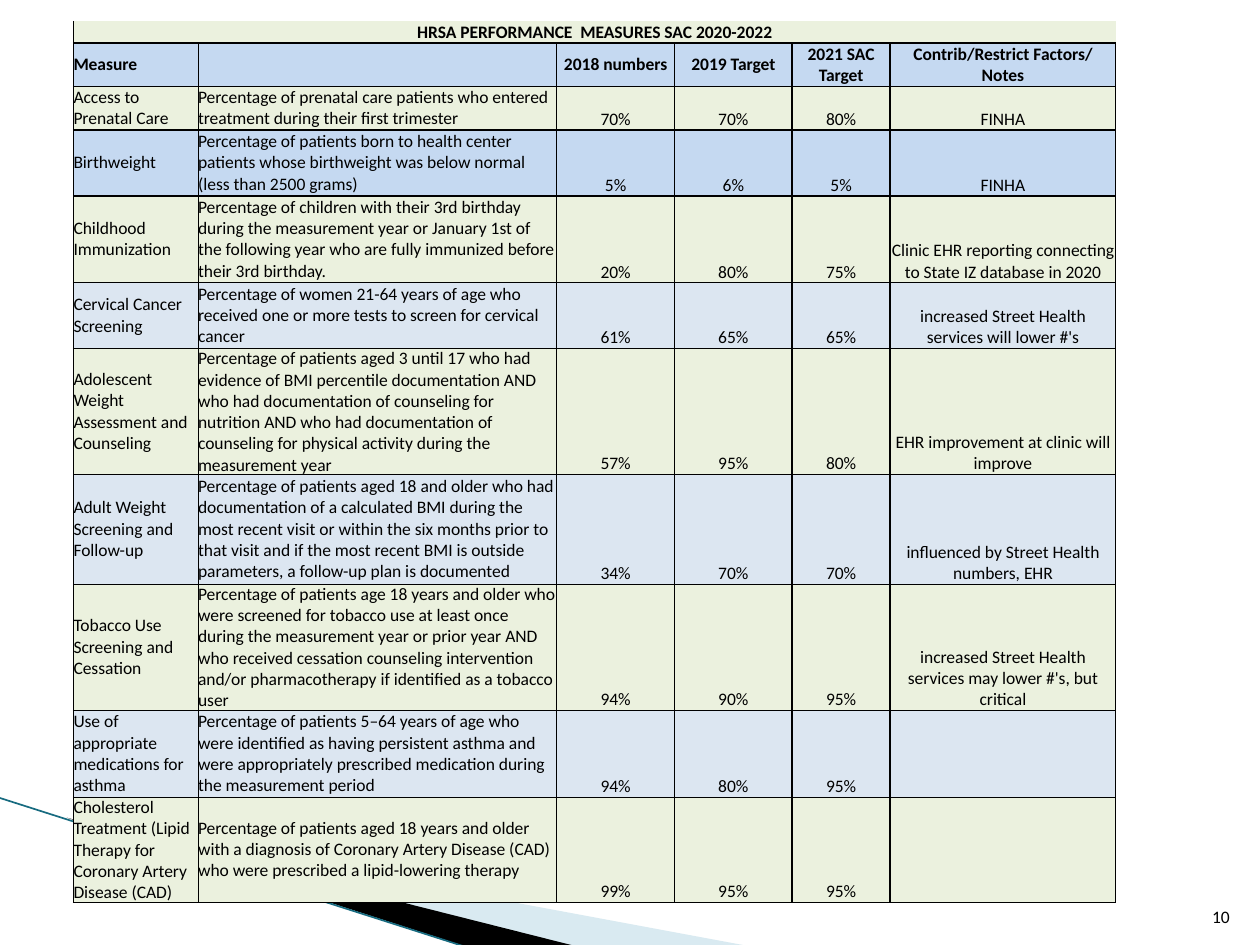
from lxml import etree
from pptx import Presentation
from pptx import util as u
from pptx.dml import color
from pptx.enum import shapes, text
from pptx.oxml import ns

BLACK = color.RGBColor(0x00, 0x00, 0x00)
PALE_TEAL = color.RGBColor(0xA0, 0xCB, 0xDC)
LINE_TEAL = color.RGBColor(0x17, 0x6B, 0x80)
GREEN = color.RGBColor(0xEB, 0xF1, 0xDE)
BLUE = color.RGBColor(0xC5, 0xD9, 0xF1)
PALE_BLUE = color.RGBColor(0xDC, 0xE6, 0xF1)

FONT = {"name": "Calibri", "size": u.Pt(10)}
NO_MARGINS = dict.fromkeys(("margin_left", "margin_top", "margin_right", "margin_bottom"), 0)
LEFT, CENTER, RIGHT = text.PP_ALIGN.LEFT, text.PP_ALIGN.CENTER, text.PP_ALIGN.RIGHT
MIDDLE, BOTTOM = text.MSO_ANCHOR.MIDDLE, text.MSO_ANCHOR.BOTTOM

COLUMN_WIDTHS = [71.2, 204.8, 67.6, 67, 56.2, 128.8]
ROW_HEIGHTS = [12.5, 25, 25, 37.5, 49.7, 37.5, 62.5, 62.5, 62.5, 49.7, 37.5]
VERTICAL_LINES = [1, 0.5, 1, 1, 1, 1, 1]
HORIZONTAL_LINES = [0, 1, 1, 1, 1, 0.5, 0.5, 0.5, 0.5, 0.5, 0.5, 0.5]
ROW_FILLS = [GREEN, BLUE, GREEN, BLUE] + [GREEN, PALE_BLUE] * 3 + [GREEN]

ROWS = [
    ["HRSA PERFORMANCE  MEASURES SAC 2020-2022", "", "", "", "", ""],
    ["Measure", "", "2018 numbers", "2019 Target", "2021 SAC Target",
     "Contrib/Restrict Factors/ Notes"],
    ["Access to Prenatal Care",
     "Percentage of prenatal care patients who entered treatment during their first trimester",
     "70%", "70%", "80%", "FINHA"],
    ["Birthweight",
     "Percentage of patients born to health center patients whose birthweight was below normal "
     "(less than 2500 grams)",
     "5%", "6%", "5%", "FINHA"],
    ["Childhood Immunization",
     "Percentage of children with their 3rd birthday during the measurement year or January 1st "
     "of the following year who are fully immunized before their 3rd birthday.",
     "20%", "80%", "75%", "Clinic EHR reporting connecting to State IZ database in 2020"],
    ["Cervical Cancer Screening",
     "Percentage of women 21-64 years of age who received one or more tests to screen for "
     "cervical cancer",
     "61%", "65%", "65%", "increased Street Health services will lower #'s"],
    ["Adolescent Weight Assessment and Counseling",
     "Percentage of patients aged 3 until 17 who had evidence of BMI percentile documentation "
     "AND who had documentation of counseling for nutrition AND who had documentation of "
     "counseling for physical activity during the measurement year",
     "57%", "95%", "80%", "EHR improvement at clinic will improve"],
    ["Adult Weight Screening and Follow-up",
     "Percentage of patients aged 18 and older who had documentation of a calculated BMI during "
     "the most recent visit or within the six months prior to that visit and if the most recent "
     "BMI is outside parameters, a follow-up plan is documented",
     "34%", "70%", "70%", "influenced by Street Health numbers, EHR"],
    ["Tobacco Use Screening and Cessation",
     "Percentage of patients age 18 years and older who were screened for tobacco use at least "
     "once during the measurement year or prior year AND who received cessation counseling "
     "intervention and/or pharmacotherapy if identified as a tobacco user",
     "94%", "90%", "95%", "increased Street Health services may lower #'s, but critical"],
    ["Use of appropriate medications for asthma",
     "Percentage of patients 5–64 years of age who were identified as having persistent asthma "
     "and were appropriately prescribed medication during the measurement period",
     "94%", "80%", "95%", ""],
    ["Cholesterol Treatment (Lipid Therapy for Coronary Artery Disease (CAD)",
     "Percentage of patients aged 18 years and older with a diagnosis of Coronary Artery Disease "
     "(CAD) who were prescribed a lipid-lowering therapy",
     "99%", "95%", "95%", ""],
]


def apply_format(target, values):
    for name, value in values.items():
        setattr(target, name, value)


def format_paragraph(paragraph, alignment, bold=False):
    paragraph.alignment = alignment
    apply_format(paragraph.font, {**FONT, "bold": bold})
    paragraph.font.color.rgb = BLACK


def add_wedge(slide, points, fill, opacity=100):
    corners = [(u.Pt(x), u.Pt(y)) for x, y in points]
    builder = slide.shapes.build_freeform(*corners[0], scale=1.0)
    builder.add_line_segments(corners[1:], close=True)
    shape = builder.convert_to_shape()
    shape.shadow.inherit = False
    shape.fill.solid()
    shape.fill.fore_color.rgb = fill
    shape.line.fill.background()
    if opacity < 100:
        rgb = shape.fill._xPr.find(".//" + ns.qn("a:srgbClr"))
        etree.SubElement(rgb, ns.qn("a:alpha"), val=str(opacity * 1000))


def add_line(slide, start, end, line_color, width):
    ends = [u.Pt(value) for value in (*start, *end)]
    connector = slide.shapes.add_connector(shapes.MSO_CONNECTOR.STRAIGHT, *ends)
    connector.line.color.rgb = line_color
    connector.line.width = u.Pt(width)
    etree.SubElement(connector._element.spPr, ns.qn("a:effectLst"))


def add_page_number(slide, number):
    box = slide.shapes.add_textbox(u.Pt(681), u.Pt(504.7), u.Pt(28.8), u.Pt(28.8))
    apply_format(box.text_frame, {"word_wrap": True, "vertical_anchor": BOTTOM})
    paragraph = box.text_frame.paragraphs[0]
    paragraph.text = number
    format_paragraph(paragraph, RIGHT)


def set_borders(cell, widths):
    properties = cell._tc.get_or_add_tcPr()
    for side, width in zip("LRTB", widths):
        border = etree.SubElement(properties, ns.qn(f"a:ln{side}"), w=str(u.Pt(width)))
        if width:
            fill = etree.SubElement(border, ns.qn("a:solidFill"))
            etree.SubElement(fill, ns.qn("a:srgbClr"), val=str(BLACK))
        else:
            etree.SubElement(border, ns.qn("a:noFill"))


def fill_cell(cell, row, column, content):
    right = 0 if row == 0 else VERTICAL_LINES[column + 1]
    set_borders(cell, (VERTICAL_LINES[column], right,
                       HORIZONTAL_LINES[row], HORIZONTAL_LINES[row + 1]))
    cell.fill.solid()
    cell.fill.fore_color.rgb = ROW_FILLS[row]
    is_middle = row == 1 or (row > 1 and column < 2)
    apply_format(cell, {**NO_MARGINS, "vertical_anchor": MIDDLE if is_middle else BOTTOM})
    paragraph = cell.text_frame.paragraphs[0]
    paragraph.text = content
    format_paragraph(paragraph, LEFT if row and column < 2 else CENTER, bold=row < 2)


def add_measures_table(slide):
    frame = slide.shapes.add_table(len(ROWS), len(COLUMN_WIDTHS), u.Pt(42), u.Pt(12),
                                   u.Pt(sum(COLUMN_WIDTHS)), u.Pt(sum(ROW_HEIGHTS)))
    table = frame.table
    apply_format(table, {"first_row": False, "horz_banding": False})
    for column, width in zip(table.columns, COLUMN_WIDTHS):
        column.width = u.Pt(width)
    for row, height in zip(table.rows, ROW_HEIGHTS):
        row.height = u.Pt(height)
    for row, contents in enumerate(ROWS):
        for column, content in enumerate(contents):
            fill_cell(table.cell(row, column), row, column, content)
    table.cell(0, 0).merge(table.cell(0, len(COLUMN_WIDTHS) - 1))


def main():
    presentation = Presentation()
    presentation.slide_width, presentation.slide_height = u.Pt(720), u.Pt(540)
    slide = presentation.slides.add_slide(presentation.slide_layouts[6])
    for placeholder in list(slide.placeholders):
        placeholder._element.getparent().remove(placeholder._element)
    add_wedge(slide, [(39.6, 468.4), (428.4, 540.7), (328.3, 540.7)], PALE_TEAL, 40)
    add_wedge(slide, [(38.2, 467.3), (329, 540.7), (267.8, 541.4)], BLACK)
    add_line(slide, (-0.7, 455.8), (267.1, 541.4), LINE_TEAL, 0.95)
    add_page_number(slide, "10")
    add_measures_table(slide)
    presentation.save("out.pptx")


if __name__ == "__main__":
    main()
